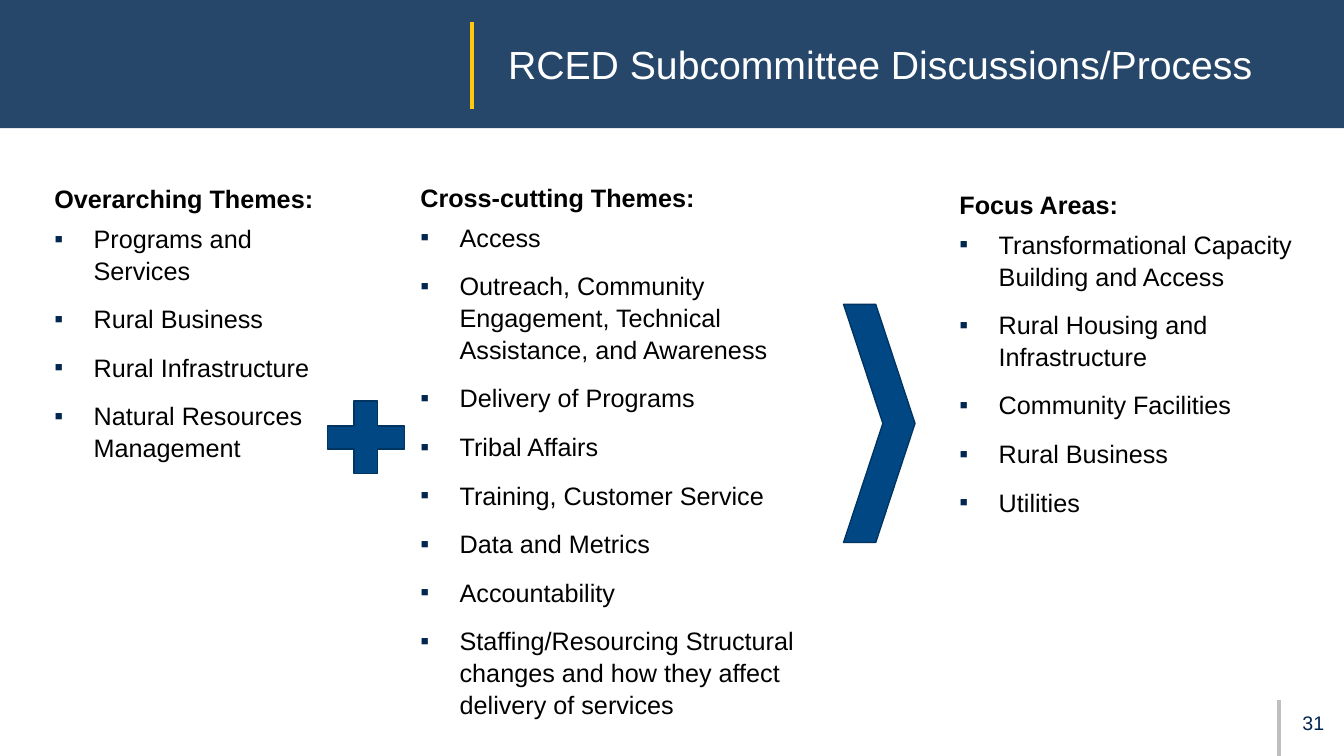
from dataclasses import dataclass

from lxml import etree
from pptx import Presentation, util as u
from pptx.dml.color import RGBColor
from pptx.enum import shapes, text
from pptx.oxml.ns import qn

# Content: each column is (left, top, width, heading, items), lengths in cm
TITLE = "RCED Subcommittee Discussions/Process"
PAGE = "31"
OVERARCHING = (1.12, 4.45, 7.44, "Overarching Themes:", [
    "Programs and Services",
    "Rural Business",
    "Rural Infrastructure",
    "Natural Resources Management",
])
CROSS_CUTTING = (10.34, 4.42, 11.15, "Cross-cutting Themes:", [
    "Access",
    "Outreach, Community Engagement, Technical Assistance, and Awareness",
    "Delivery of Programs",
    "Tribal Affairs",
    "Training, Customer Service",
    "Data and Metrics",
    "Accountability",
    "Staffing/Resourcing Structural changes and how they affect delivery of services",
])
FOCUS = (23.93, 4.6, 9.83, "Focus Areas:", [
    "Transformational Capacity Building and Access",
    "Rural Housing and Infrastructure",
    "Community Facilities",
    "Rural Business",
    "Utilities",
])
COLUMN_H = 13.18
SLIDE_W, SLIDE_H = 33.87, 19.05


@dataclass(frozen=True)
class Theme:
    font: str = "Arial"
    navy: str = "012750"
    blue: str = "004784"
    edge: str = "003562"
    gold: str = "FFC80E"
    grey: str = "BFBFBF"
    white: str = "FFFFFF"
    black: str = "000000"
    title: int = 28
    body: int = 18
    page: int = 14


T = Theme()
rgb = RGBColor.from_string


def place(sp, x, y, w, h):
    sp.left, sp.top, sp.width, sp.height = (u.Cm(v) for v in (x, y, w, h))


def write(p, words, size=T.body, color=T.black, bold=False, align=text.PP_ALIGN.LEFT,
          spacing=1.0, gap=0, bullet=None):
    """Fill one paragraph, with a hanging bullet if one is given."""
    pPr = p._p.get_or_add_pPr()
    indent = u.Cm(0.99) if bullet else 0
    pPr.set("marL", str(indent))
    pPr.set("indent", str(-indent))
    if bullet:
        clr = etree.SubElement(pPr, qn("a:buClr"))
        etree.SubElement(clr, qn("a:srgbClr"), val=T.navy)
        etree.SubElement(pPr, qn("a:buFont"), typeface=T.font)
        etree.SubElement(pPr, qn("a:buChar"), char=bullet)
    else:
        etree.SubElement(pPr, qn("a:buNone"))
    p.alignment, p.line_spacing = align, spacing
    p.space_before = p.space_after = u.Pt(gap)
    r = p.add_run()
    r.text = words
    f = r.font
    f.name, f.size, f.bold = T.font, u.Pt(size), bold
    f.color.rgb = rgb(color)


def fill_column(sp, x, y, w, heading, items):
    place(sp, x, y, w, COLUMN_H)
    tf = sp.text_frame
    tf.word_wrap, tf.auto_size = True, text.MSO_AUTO_SIZE.NONE
    write(tf.paragraphs[0], heading, bold=True, spacing=1.05)
    for item in items:
        write(tf.add_paragraph(), item, spacing=1.05, gap=6, bullet="▪")


def add_block(s, kind, x, y, w, h, fill, edge=None):
    sp = s.shapes.add_shape(kind, *(u.Cm(v) for v in (x, y, w, h)))
    sp.shadow.inherit = False
    sp.fill.solid()
    sp.fill.fore_color.rgb = rgb(fill)
    if edge:
        sp.line.color.rgb, sp.line.width = rgb(edge), u.Pt(1)
    else:
        sp.line.fill.background()
    return sp


def add_rule(s, x, top, bottom, color):
    ln = s.shapes.add_connector(shapes.MSO_CONNECTOR.STRAIGHT,
                                u.Cm(x), u.Cm(top), u.Cm(x), u.Cm(bottom))
    ln.line.color.rgb, ln.line.width = rgb(color), u.Pt(3)
    etree.SubElement(ln._element.spPr, qn("a:effectLst"))


def main():
    prs = Presentation()
    prs.slide_width, prs.slide_height = u.Cm(SLIDE_W), u.Cm(SLIDE_H)
    s = prs.slides.add_slide(prs.slide_layouts[1])
    title, body = s.placeholders
    tree = s.shapes._spTree

    # Header band, behind the title
    band = add_block(s, shapes.MSO_SHAPE.RECTANGLE, 0, 0, SLIDE_W, 3.23, T.navy)
    clr = band._element.spPr.find(qn("a:solidFill"))[0]
    etree.SubElement(clr, qn("a:alpha"), val="85000")
    tree.remove(band._element)
    tree.insert(2, band._element)
    add_rule(s, 11.89, 0.56, 2.74, T.gold)

    # Title
    place(title, 12.55, 1.02, 20.27, 1.35)
    tf = title.text_frame
    tf.word_wrap, tf.auto_size = True, text.MSO_AUTO_SIZE.NONE
    tf.vertical_anchor = text.MSO_ANCHOR.MIDDLE
    write(tf.paragraphs[0], TITLE, size=T.title, color=T.white, spacing=0.9)

    # Three columns joined by a plus and a chevron
    fill_column(s.shapes.add_textbox(0, 0, 0, 0), *OVERARCHING)
    add_block(s, shapes.MSO_SHAPE.MATH_PLUS, 7.9, 9.78, 2.64, 2.49, T.blue, T.edge)
    fill_column(body, *CROSS_CUTTING)
    chevron = add_block(s, shapes.MSO_SHAPE.CHEVRON, 21.26, 7.67, 1.8, 6, T.blue, T.edge)
    chevron.adjustments[0] = 0.55
    fill_column(s.shapes.add_textbox(0, 0, 0, 0), *FOCUS)

    # Page number
    add_rule(s, 32.23, 17.65, SLIDE_H, T.grey)
    page = s.shapes.add_textbox(0, 0, 0, 0)
    place(page, 32.44, 17.78, 1.32, 0.86)
    page.text_frame.word_wrap = True
    write(page.text_frame.paragraphs[0], PAGE, size=T.page, color=T.navy,
          align=text.PP_ALIGN.CENTER)

    prs.save("out.pptx")


if __name__ == "__main__":
    main()
